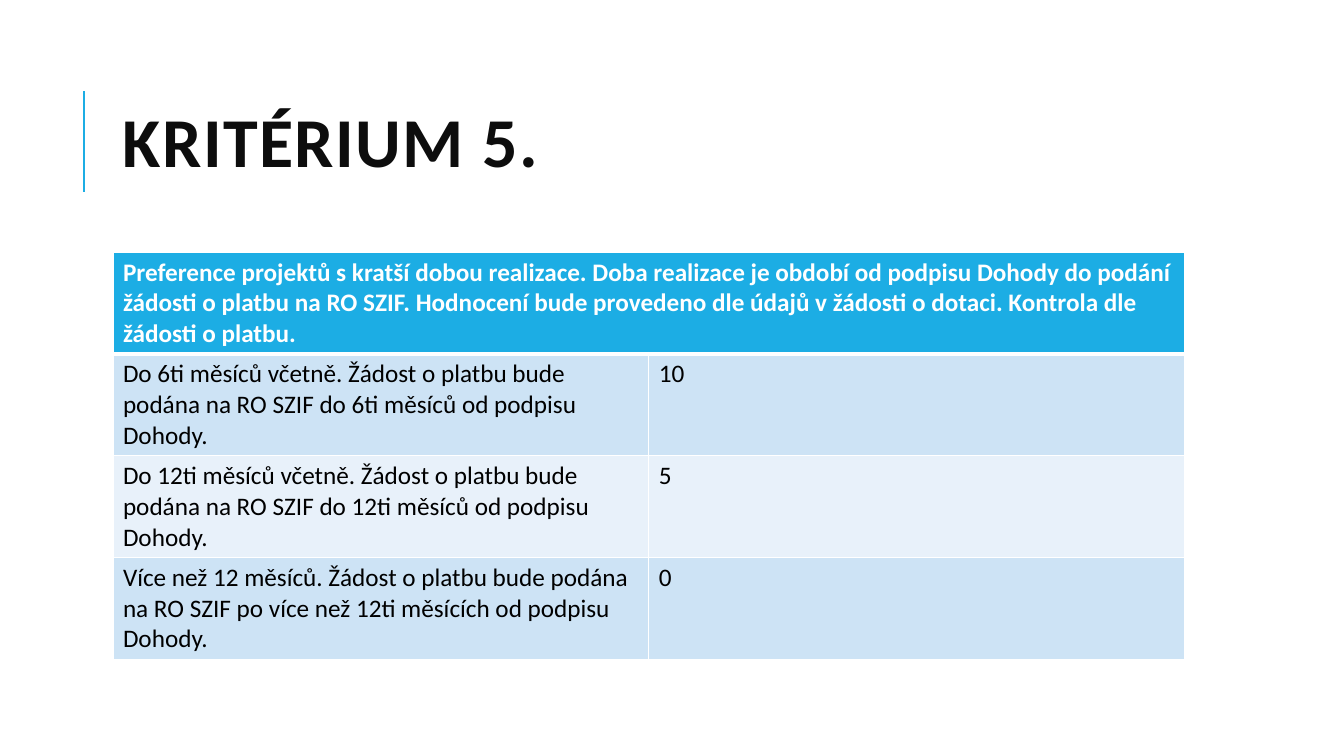
from pptx import Presentation
from pptx.dml.color import RGBColor as Rgb
from pptx.enum.shapes import MSO_CONNECTOR as Link
from pptx.enum.text import MSO_ANCHOR as Anchor
from pptx.oxml import parse_xml
from pptx.oxml.ns import nsdecls, qn
from pptx.util import Inches, Pt

TITLE = "KRITÉRIUM 5."
HEAD = (
    "Preference projektů s kratší dobou realizace. Doba realizace je období "
    "od podpisu Dohody do podání žádosti o platbu na RO SZIF. Hodnocení bude "
    "provedeno dle údajů v žádosti o dotaci. Kontrola dle žádosti o platbu."
)
ROWS = [
    ("Do 6ti měsíců včetně. Žádost o platbu bude podána na RO SZIF do 6ti měsíců od podpisu Dohody.", "10"),
    ("Do 12ti měsíců včetně. Žádost o platbu bude podána na RO SZIF do 12ti měsíců od podpisu Dohody.", "5"),
    ("Více než 12 měsíců. Žádost o platbu bude podána na RO SZIF po více než 12ti měsících od podpisu Dohody.", "0"),
]
THEME = {
    "font": "Calibri", "title": 50, "body": 18,
    "dark": "0D0D0D", "text": "000000", "white": "FFFFFF",
    "blue": "1CADE4", "bands": ("CDE3F5", "E8F1FA"),
}
LEFT, WIDTH = 1.12, 10.63
TOP, ROW_H = 2.5, 1.01


def style(para, size, color, bold):
    for run in para.runs:
        font = run.font
        font.name, font.size, font.bold = THEME["font"], Pt(size), bold
        font.color.rgb = Rgb.from_string(color)


def edge(cell, top, low):
    props = cell._tc.get_or_add_tcPr()
    sides = (("L", 1), ("R", 1), ("T", top), ("B", low))
    for i, (side, width) in enumerate(sides):
        props.insert(i, parse_xml(
            f'<a:ln{side} {nsdecls("a")} w="{Pt(width)}"><a:solidFill>'
            f'<a:srgbClr val="{THEME["white"]}"/></a:solidFill></a:ln{side}>'))


def paint(cell, text, fill, color, bold, top, low):
    cell.text_frame.text = text
    style(cell.text_frame.paragraphs[0], THEME["body"], color, bold)
    cell.margin_left = cell.margin_right = Inches(0.1)
    cell.margin_top = cell.margin_bottom = Inches(0.05)
    cell.fill.solid()
    cell.fill.fore_color.rgb = Rgb.from_string(fill)
    edge(cell, top, low)


def add_title(slide):
    rule = slide.shapes.add_connector(
        Link.STRAIGHT, Inches(0.83), Inches(1.9), Inches(0.83), Inches(0.9))
    rule.line.color.rgb = Rgb.from_string(THEME["blue"])
    rule.line.width = Pt(1.5)
    rule._element.spPr.append(parse_xml(f'<a:effectLst {nsdecls("a")}/>'))

    box = slide.shapes.add_textbox(
        Inches(LEFT), Inches(0.64), Inches(WIDTH), Inches(1.64))
    frame = box.text_frame
    frame.word_wrap = True
    frame.vertical_anchor = Anchor.MIDDLE
    frame.text = TITLE
    para = frame.paragraphs[0]
    para.line_spacing = 0.8
    style(para, THEME["title"], THEME["dark"], True)
    para.runs[0].font._element.set("spc", "100")


def add_grid(slide):
    count = len(ROWS) + 1
    grid = slide.shapes.add_table(
        count, 2, Inches(LEFT), Inches(TOP),
        Inches(WIDTH), Inches(ROW_H * count)).table
    for row in grid.rows:
        row.height = Inches(ROW_H)
    grid.cell(0, 0).merge(grid.cell(0, 1))
    for col, text in enumerate((HEAD, "")):
        paint(grid.cell(0, col), text, THEME["blue"], THEME["white"], True, 1, 3)
    for i, row in enumerate(ROWS):
        for col, text in enumerate(row):
            paint(grid.cell(i + 1, col), text, THEME["bands"][i % 2],
                  THEME["text"], False, 1 if i else 3, 1)


def main():
    deck = Presentation()
    deck.slide_width, deck.slide_height = Inches(13.33), Inches(7.5)
    slide = deck.slides.add_slide(deck.slide_layouts[6])
    add_title(slide)
    add_grid(slide)
    deck.save("out.pptx")


if __name__ == "__main__":
    main()
